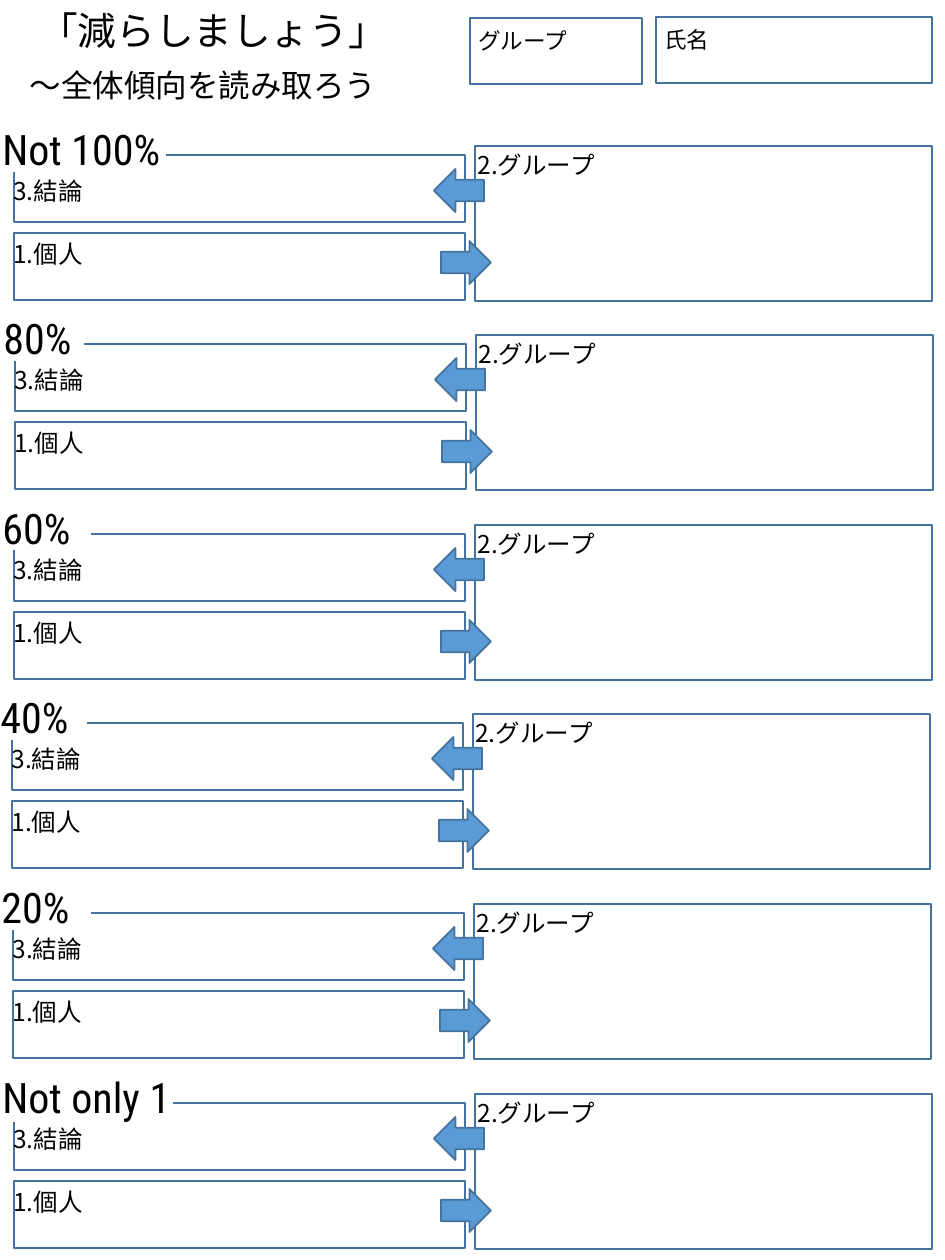
"""Build a worksheet slide with six answer rows under a title and name boxes."""

from dataclasses import dataclass

from lxml.etree import SubElement
from pptx import Presentation
from pptx.dml.color import RGBColor
from pptx.enum.shapes import MSO_SHAPE as Preset
from pptx.enum.text import MSO_AUTO_SIZE as AutoSize, PP_ALIGN as Align
from pptx.oxml.ns import qn
from pptx.shapes.autoshape import Shape
from pptx.slide import Slide
from pptx.util import Emu, Pt

PX_PER_INCH = 126
SLIDE_WIDTH, SLIDE_HEIGHT = 945, 1260
FIRST_ROW_TOP = 146
FIVE_ROWS_HEIGHT = 948
COLORS = {"ink": "000000", "outline": "43739E", "arrow": "5B9BD5", "mask": "FFFFFF"}
JAPANESE, LATIN = "Noto Sans CJK JP", "Roboto Condensed"


@dataclass(frozen=True)
class Box:
    left: int
    top: int
    width: int
    height: int

    def moved(self, left: int, top: int) -> "Box":
        return Box(self.left + left, self.top + top, self.width, self.height)

    def emu(self) -> list[Emu]:
        lengths = (self.left, self.top, self.width, self.height)
        return [px(length) for length in lengths]


@dataclass(frozen=True)
class Label:
    text: str
    box: Box
    size: float
    font: str = JAPANESE
    align: Align | None = None


@dataclass(frozen=True)
class Row:
    heading: str
    left: int
    heading_width: int
    mask: Box


WIDE, NARROW = 224, 112
ROWS = [
    Row("Not 100%", 14, WIDE, Box(-4, 3, 170, 23)),
    Row("80%", 15, NARROW, Box(-4, -2, 88, 28)),
    Row("60%", 14, NARROW, Box(3, -3, 88, 28)),
    Row("40%", 12, NARROW, Box(-1, -2, 88, 28)),
    Row("20%", 13, NARROW, Box(3, -2, 88, 28)),
    Row("Not only 1", 14, WIDE, Box(3, 5, 170, 23)),
]
ROW_FRAMES = [Box(0, 9, 451, 67), Box(461, 0, 457, 155), Box(0, 87, 451, 67)]
ROW_LABELS = [
    Label("1.個人", Box(-13, 87, 382, 43), 14),
    Label("2.グループ", Box(451, -2, 382, 43), 14),
    Label("3.結論", Box(-13, 24, 382, 43), 14),
]
TO_GROUP_ARROW = Box(427, 95, 50, 43)
TO_CONCLUSION_ARROW = Box(420, 23, 50, 43)

HEADER_FRAMES = [Box(656, 17, 276, 66), Box(470, 18, 172, 66)]
HEADER_LABELS = [
    Label("「減らしましょう」", Box(11, 1, 404, 59), 22.1, align=Align.CENTER),
    Label("～全体傾向を読み取ろう", Box(1, 60, 404, 50), 18, align=Align.CENTER),
    Label("氏名", Box(652, 20, 137, 40), 12.9),
    Label("グループ", Box(466, 21, 175, 40), 12.9),
]


def px(length: int) -> Emu:
    return Emu(round(length * 914400 / PX_PER_INCH))


def color(name: str) -> RGBColor:
    return RGBColor.from_string(COLORS[name])


def add_box(slide: Slide, box: Box, preset: Preset = Preset.RECTANGLE,
            fill: str | None = None, outline: str | None = "outline") -> Shape:
    shape = slide.shapes.add_shape(preset, *box.emu())
    shape.shadow.inherit = False
    if fill:
        shape.fill.solid()
        shape.fill.fore_color.rgb = color(fill)
    else:
        shape.fill.background()
    if outline:
        shape.line.color.rgb = color(outline)
        shape.line.width = Pt(1)
    else:
        shape.line.fill.background()
    return shape


def add_label(slide: Slide, label: Label) -> None:
    frame = slide.shapes.add_textbox(*label.box.emu()).text_frame
    frame.word_wrap = True
    frame.auto_size = AutoSize.SHAPE_TO_FIT_TEXT
    paragraph = frame.paragraphs[0]
    paragraph.alignment = label.align
    run = paragraph.add_run()
    run.text = label.text
    run.font.size = Pt(label.size)
    run.font.color.rgb = color("ink")
    run.font.name = label.font
    SubElement(run.font._element, qn("a:ea")).set("typeface", label.font)


def add_row(slide: Slide, row: Row, top: int) -> None:
    for frame in ROW_FRAMES:
        add_box(slide, frame.moved(row.left, top))
    for label in ROW_LABELS:
        add_label(slide, Label(label.text, label.box.moved(row.left, top), label.size))
    add_box(slide, TO_GROUP_ARROW.moved(row.left, top), Preset.RIGHT_ARROW, "arrow")
    back = add_box(slide, TO_CONCLUSION_ARROW.moved(row.left, top), Preset.RIGHT_ARROW, "arrow")
    back._element.spPr.find(qn("a:xfrm")).set("flipH", "1")
    add_box(slide, row.mask.moved(0, top), fill="mask", outline=None)
    heading_box = Box(row.left - 24, top - 29, row.heading_width, 63)
    add_label(slide, Label(row.heading, heading_box, 24, LATIN))


def main() -> None:
    presentation = Presentation()
    presentation.slide_width = px(SLIDE_WIDTH)
    presentation.slide_height = px(SLIDE_HEIGHT)
    slide = presentation.slides.add_slide(presentation.slide_layouts[6])
    for frame in HEADER_FRAMES:
        add_box(slide, frame)
    for label in HEADER_LABELS:
        add_label(slide, label)
    for index, row in enumerate(ROWS):
        add_row(slide, row, FIRST_ROW_TOP + index * FIVE_ROWS_HEIGHT // 5)
    presentation.save("out.pptx")


if __name__ == "__main__":
    main()
